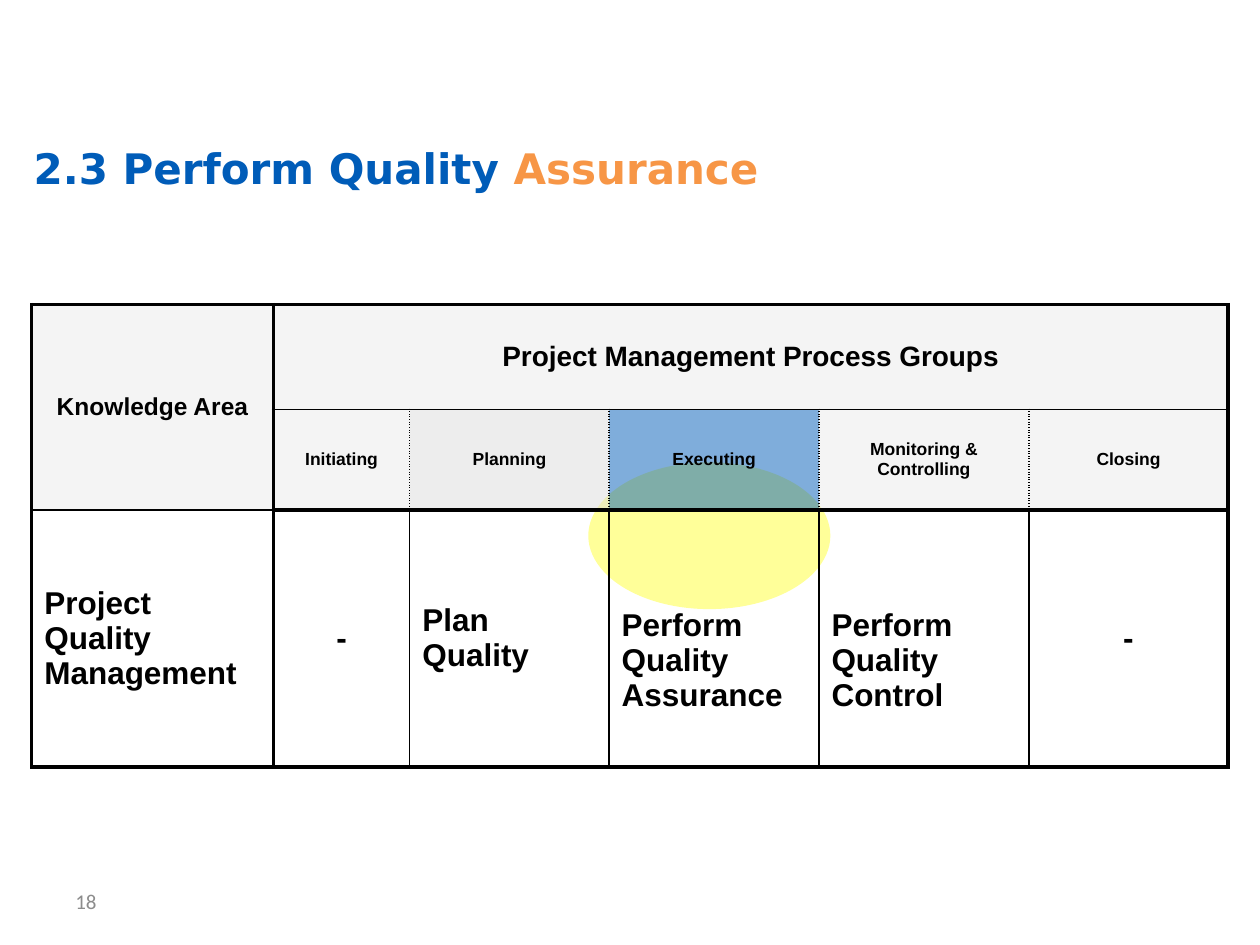
from dataclasses import dataclass

from lxml.etree import SubElement
from pptx import Presentation
from pptx.dml.color import RGBColor
from pptx.enum.shapes import MSO_SHAPE
from pptx.enum.text import MSO_ANCHOR, PP_ALIGN
from pptx.oxml import parse_xml
from pptx.oxml.ns import nsdecls, qn
from pptx.util import Cm, Pt


@dataclass(frozen=True)
class Theme:
    """Colours, fonts and sizes of the slide."""
    ink: str = "000000"
    blue: str = "005CB8"
    orange: str = "F79646"
    yellow: str = "FFFF99"
    pale: str = "EAEAEA"
    grey: str = "DDDDDD"
    mute: str = "8C8C8C"
    body: str = "Arial"
    head: str = "DejaVu Sans"
    foot: str = "Calibri"
    title: int = 24
    area: int = 14
    group: int = 16
    phase: int = 10
    task: int = 18
    page: int = 12
    thick: float = 2.25
    thin: float = 1


THEME = Theme()
COLS = (4.87, 2.75, 4.02, 4.23, 4.23, 4.02)
ROWS = (2.11, 2.03, 5.18)
PHASES = (
    ("Initiating", THEME.pale),
    ("Planning", THEME.grey),
    ("Executing", THEME.blue),
    ("Monitoring & Controlling", THEME.pale),
    ("Closing", THEME.pale),
)
TASKS = (
    "Project Quality Management", "-", "Plan Quality",
    "Perform Quality Assurance", "Perform Quality Control", "-",
)


def style(font, name, size, color, bold=False):
    """Set the face, size, colour and weight of a font."""
    font.name, font.size, font.bold = name, Pt(size), bold
    font.color.rgb = RGBColor.from_string(color)


def add_text(slide, box, anchor):
    """Add a wrapped text box and return its first paragraph."""
    frame = slide.shapes.add_textbox(*map(Cm, box)).text_frame
    frame.word_wrap = True
    frame.vertical_anchor = anchor
    return frame.paragraphs[0]


def add_title(slide, box):
    """Place the title in two colours."""
    para = add_text(slide, box, MSO_ANCHOR.TOP)
    for text, color in (("2.3 Perform Quality ", THEME.blue), ("Assurance", THEME.orange)):
        run = para.add_run()
        run.text = text
        style(run.font, THEME.head, THEME.title, color, True)


def add_page(slide, box):
    """Place the page number."""
    para = add_text(slide, box, MSO_ANCHOR.MIDDLE)
    para.text = "18"
    style(para.font, THEME.foot, THEME.page, THEME.mute)


def add_glow(slide, box):
    """Place the oval that marks the current process."""
    oval = slide.shapes.add_shape(MSO_SHAPE.OVAL, *map(Cm, box))
    oval.shadow.inherit = False
    oval.fill.solid()
    oval.fill.fore_color.rgb = RGBColor.from_string(THEME.yellow)
    oval.line.fill.background()


def fill_cell(cell, text, size, color=None, center=True):
    """Write a cell and tint it with a half-clear colour."""
    cell.text = text
    cell.vertical_anchor = MSO_ANCHOR.MIDDLE
    para = cell.text_frame.paragraphs[0]
    para.alignment = PP_ALIGN.CENTER if center else PP_ALIGN.LEFT
    style(para.font, THEME.body, size, THEME.ink, True)
    if color is None:
        cell.fill.background()
        return
    cell.fill.solid()
    cell.fill.fore_color.rgb = RGBColor.from_string(color)
    tint = cell._tc.tcPr.find(qn("a:solidFill"))[0]
    SubElement(tint, qn("a:alpha"), val="50000")


def side(row, col):
    """Return width and dash of the vertical edge left of a column."""
    if col in (0, 1, len(COLS)):
        return THEME.thick, "solid"
    return THEME.thin, "sysDot" if row == 1 else "solid"


def level(row, col):
    """Return width and dash of the horizontal edge above a row."""
    thin = row == 1 or (row == 2 and col == 0)
    return THEME.thin if thin else THEME.thick, "solid"


def rule_cell(cell, row, col):
    """Draw the four borders of a cell, spans included."""
    down = row + (cell.span_height if cell.is_merge_origin else 1)
    right = col + (cell.span_width if cell.is_merge_origin else 1)
    edges = {
        "lnL": side(row, col), "lnR": side(row, right),
        "lnT": level(row, col), "lnB": level(down, col),
    }
    for spot, (tag, (width, dash)) in enumerate(edges.items()):
        line = parse_xml(
            f'<a:{tag} {nsdecls("a")} w="{Pt(width)}"><a:solidFill>'
            f'<a:srgbClr val="{THEME.ink}"/></a:solidFill>'
            f'<a:prstDash val="{dash}"/></a:{tag}>'
        )
        cell._tc.get_or_add_tcPr().insert(spot, line)


def add_grid(slide, left, top):
    """Place the table of process groups."""
    frame = slide.shapes.add_table(
        len(ROWS), len(COLS), Cm(left), Cm(top), Cm(sum(COLS)), Cm(sum(ROWS)))
    grid = frame.table
    grid.first_row = grid.horz_banding = False
    for col, width in zip(grid.columns, COLS):
        col.width = Cm(width)
    for row, height in zip(grid.rows, ROWS):
        row.height = Cm(height)
    grid.cell(0, 0).merge(grid.cell(1, 0))
    grid.cell(0, 1).merge(grid.cell(0, len(COLS) - 1))
    fill_cell(grid.cell(0, 0), "Knowledge Area", THEME.area, THEME.pale)
    fill_cell(grid.cell(0, 1), "Project Management Process Groups", THEME.group, THEME.pale)
    for col, (text, color) in enumerate(PHASES, 1):
        fill_cell(grid.cell(1, col), text, THEME.phase, color)
    for col, text in enumerate(TASKS):
        cell = grid.cell(2, col)
        fill_cell(cell, text, THEME.task, center=text == "-")
        if text.startswith("Perform"):
            cell.margin_top = Cm(1.02)
    for row in range(len(ROWS)):
        for col in range(len(COLS)):
            cell = grid.cell(row, col)
            if not cell.is_spanned:
                rule_cell(cell, row, col)


def main():
    """Build and save the slide."""
    deck = Presentation()
    deck.slide_width, deck.slide_height = Cm(25.4), Cm(19.05)
    slide = deck.slides.add_slide(deck.slide_layouts[6])
    add_page(slide, (1.27, 17.65, 5.92, 1.02))
    add_glow(slide, (11.86, 9.32, 4.88, 2.96))
    add_grid(slide, 0.64, 6.14)
    add_title(slide, (0.43, 2.74, 24.13, 1.27))
    deck.save("out.pptx")


if __name__ == "__main__":
    main()
